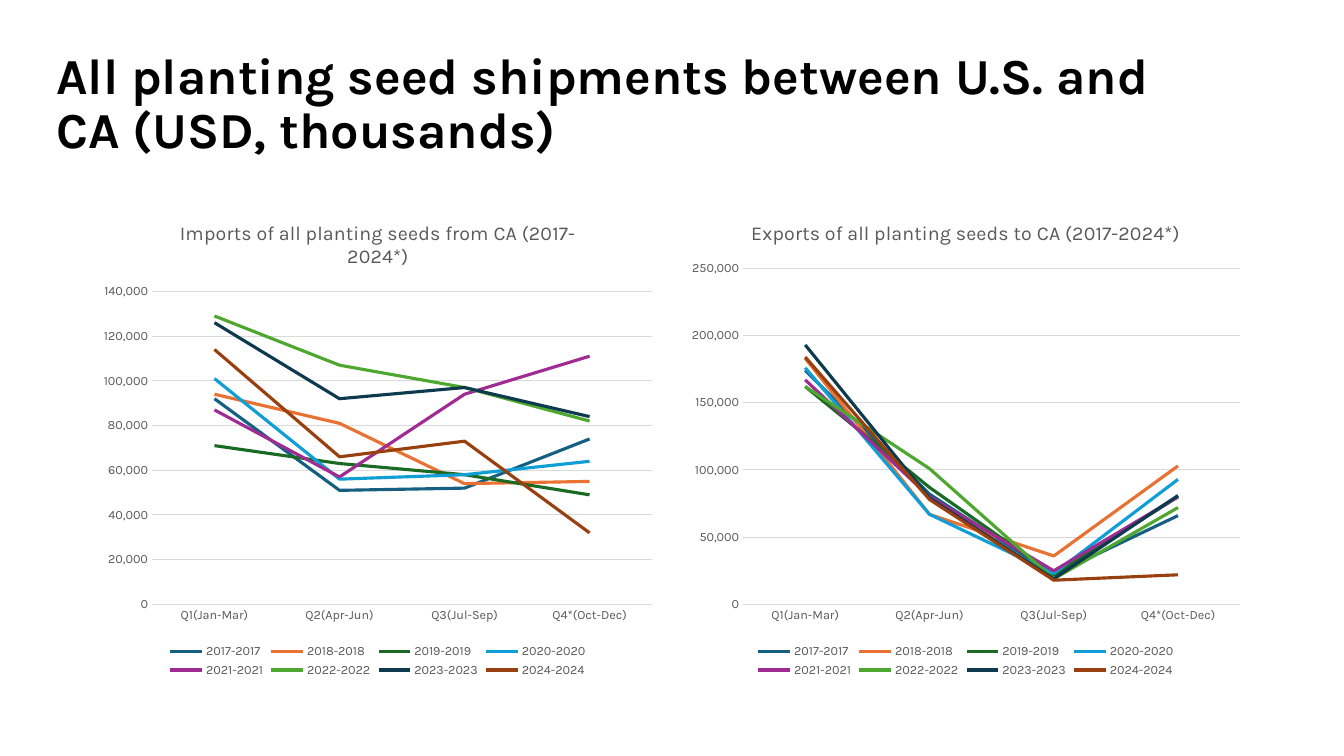
from pptx import Presentation
from pptx.chart.data import CategoryChartData
from pptx.dml.color import RGBColor
from pptx.enum.chart import XL_CHART_TYPE, XL_LEGEND_POSITION, XL_TICK_MARK
from pptx.enum.text import MSO_ANCHOR, MSO_AUTO_SIZE, PP_ALIGN
from pptx.util import Pt

LINE = XL_CHART_TYPE.LINE
BOTTOM = XL_LEGEND_POSITION.BOTTOM
NO_TICK = XL_TICK_MARK.NONE
MIDDLE = MSO_ANCHOR.MIDDLE
NO_FIT = MSO_AUTO_SIZE.NONE
LEFT = PP_ALIGN.LEFT

FONT = "Karla"
BLACK = RGBColor(0x00, 0x00, 0x00)
WHITE = RGBColor(0xFF, 0xFF, 0xFF)
GRAY = RGBColor(0x59, 0x59, 0x59)
GRID = RGBColor(0xD9, 0xD9, 0xD9)
YEAR_COLORS = [
    RGBColor(0x15, 0x60, 0x82),
    RGBColor(0xE9, 0x71, 0x32),
    RGBColor(0x19, 0x6B, 0x24),
    RGBColor(0x0F, 0x9E, 0xD5),
    RGBColor(0xA0, 0x2B, 0x93),
    RGBColor(0x4E, 0xA7, 0x2E),
    RGBColor(0x0D, 0x3A, 0x4E),
    RGBColor(0x99, 0x40, 0x10),
]

FIRST_YEAR = 2017
QUARTERS = ["Q1(Jan-Mar)", "Q2(Apr-Jun)", "Q3(Jul-Sep)", "Q4*(Oct-Dec)"]
IMPORTS = [
    (92000, 51000, 52000, 74000),
    (94000, 81000, 54000, 55000),
    (71000, 63000, 58000, 49000),
    (101000, 56000, 58000, 64000),
    (87000, 57000, 94000, 111000),
    (129000, 107000, 97000, 82000),
    (126000, 92000, 97000, 84000),
    (114000, 66000, 73000, 32000),
]
EXPORTS = [
    (174000, 82000, 22000, 66000),
    (183000, 67000, 36000, 103000),
    (162000, 87000, 22000, 80000),
    (176000, 67000, 23000, 93000),
    (167000, 80000, 25000, 80000),
    (162000, 101000, 19000, 72000),
    (193000, 79000, 19000, 81000),
    (184000, 78000, 18000, 22000),
]


def style_font(font, size, color, bold=False):
    """Apply the deck typeface with a size, colour and weight."""
    font.name = FONT
    font.size = Pt(size)
    font.color.rgb = color
    font.bold = bold


def write_text(tf, text, size=14, color=GRAY, bold=False, align=None, spacing=None):
    """Put one formatted paragraph into a text frame."""
    p = tf.paragraphs[0]
    p.alignment = align
    p.line_spacing = spacing
    r = p.add_run()
    r.text = text
    style_font(r.font, size, color, bold)


def add_title(slide, text, left, top, width, height):
    """Place the slide title in the given box."""
    sp = slide.shapes.title
    sp.left, sp.top, sp.width, sp.height = Pt(left), Pt(top), Pt(width), Pt(height)
    tf = sp.text_frame
    tf.word_wrap = True
    tf.auto_size = NO_FIT
    tf.vertical_anchor = MIDDLE
    write_text(tf, text, size=36, color=BLACK, bold=True, align=LEFT, spacing=0.9)


def format_axes(chart, top_value, step):
    """Style both axes and set the value scale."""
    for axis in (chart.category_axis, chart.value_axis):
        axis.major_tick_mark = NO_TICK
        axis.minor_tick_mark = NO_TICK
        style_font(axis.tick_labels.font, 9, GRAY)
    line = chart.category_axis.format.line
    line.color.rgb = GRID
    line.width = Pt(0.75)
    values = chart.value_axis
    values.minimum_scale = 0
    values.maximum_scale = top_value
    values.major_unit = step
    values.format.line.fill.background()
    values.tick_labels.number_format = "#,##0"
    values.tick_labels.number_format_is_linked = False
    values.has_major_gridlines = True
    grid = values.major_gridlines.format.line
    grid.color.rgb = GRID
    grid.width = Pt(0.75)


def add_shipments_chart(slide, title, rows, top_value, step, left, top, width, height):
    """Draw one quarterly line chart with a line per year."""
    data = CategoryChartData(number_format="#,##0")
    data.categories = QUARTERS
    for year, row in enumerate(rows, FIRST_YEAR):
        data.add_series(f"{year}-{year}", row)
    frame = slide.shapes.add_chart(LINE, Pt(left), Pt(top), Pt(width), Pt(height), data)
    chart = frame.chart
    style_font(chart.font, 10, BLACK)
    chart.has_title = True
    write_text(chart.chart_title.text_frame, title)
    chart.chart_title.include_in_layout = False
    chart.has_legend = True
    chart.legend.position = BOTTOM
    chart.legend.include_in_layout = False
    style_font(chart.legend.font, 9, GRAY)
    format_axes(chart, top_value, step)
    plot = chart.plots[0]
    plot.vary_by_categories = False
    for series, color in zip(plot.series, YEAR_COLORS):
        series.smooth = False
        series.format.line.color.rgb = color
        series.format.line.width = Pt(2.25)


def build_shipments_slide(prs):
    """Add the slide comparing seed imports and exports."""
    slide = prs.slides.add_slide(prs.slide_layouts[5])
    slide.background.fill.solid()
    slide.background.fill.fore_color.rgb = WHITE
    add_title(slide, "All planting seed shipments between U.S. and CA (USD, thousands)",
              33, 23, 828, 104.4)
    charts = [
        ("Imports of all planting seeds from CA (2017-2024*)", IMPORTS, 140000, 20000),
        ("Exports of all planting seeds to CA (2017-2024*)", EXPORTS, 250000, 50000),
    ]
    for i, (title, rows, top_value, step) in enumerate(charts):
        add_shipments_chart(slide, title, rows, top_value, step,
                            66 + 420 * i, 144, 408, 342.7)


def main():
    """Build and save the presentation."""
    prs = Presentation()
    prs.slide_width, prs.slide_height = Pt(960), Pt(540)
    build_shipments_slide(prs)
    prs.save("out.pptx")


if __name__ == "__main__":
    main()
